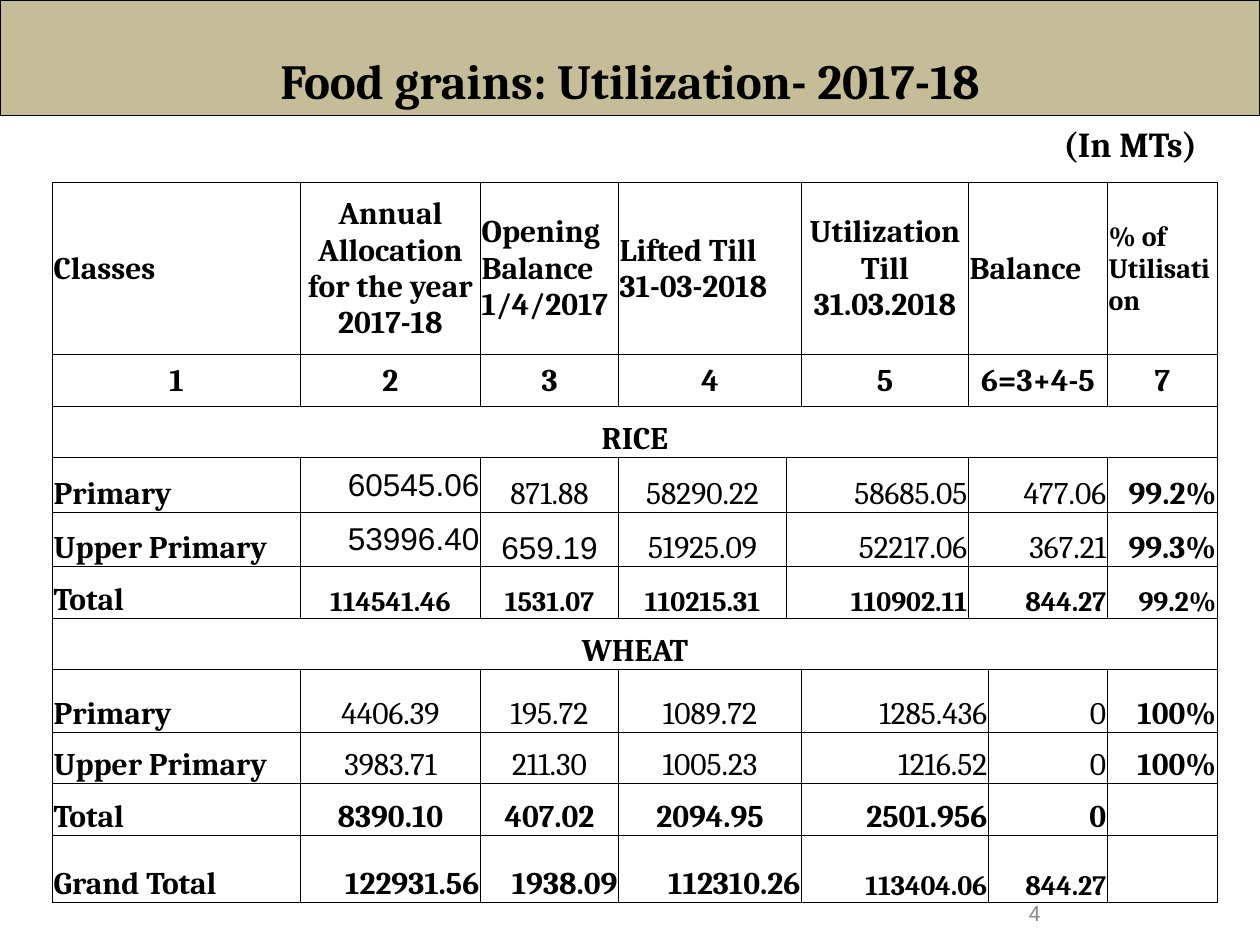
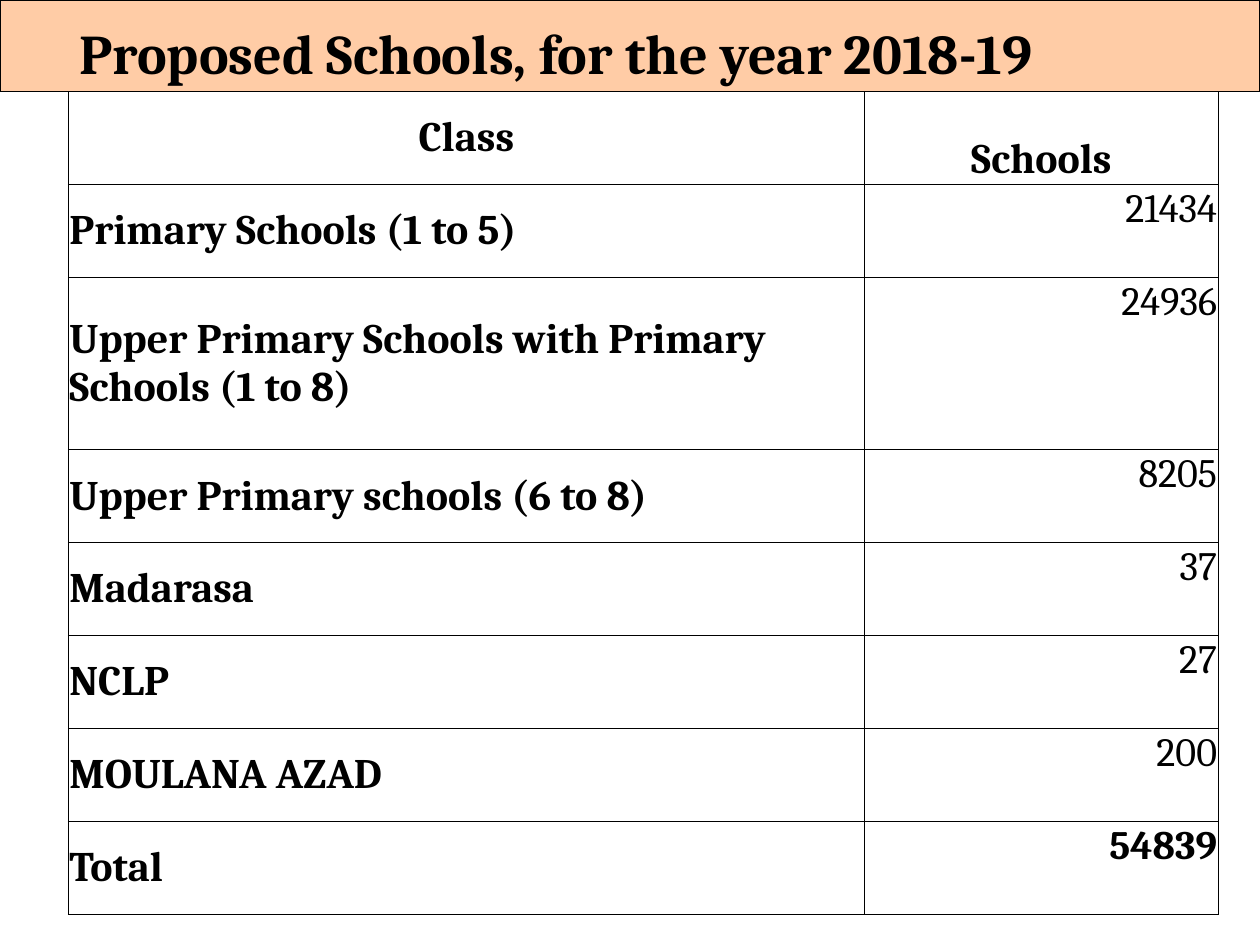
from lxml import etree
from pptx import Presentation
from pptx.dml.color import RGBColor
from pptx.enum import text as t
from pptx.oxml.ns import qn
from pptx.util import Pt

BLACK, WHITE, GREY = "000000", "FFFFFF", "8C8C8C"
LEFT, CENTER, RIGHT = t.PP_ALIGN.LEFT, t.PP_ALIGN.CENTER, t.PP_ALIGN.RIGHT
TOP, MIDDLE, BOTTOM = t.MSO_ANCHOR.TOP, t.MSO_ANCHOR.MIDDLE, t.MSO_ANCHOR.BOTTOM
BOX_MARGINS = (7.2, 3.6, 7.2, 3.6)


def rgb(value):
    return RGBColor.from_string(value)


def put(box, words, align, anchor, margins, color=BLACK, size=18, **font):
    """Write and format the text of a table cell or a text frame."""
    box.vertical_anchor = anchor
    for side, gap in zip(("left", "top", "right", "bottom"), margins):
        setattr(box, f"margin_{side}", Pt(gap))
    box.text = words
    p = getattr(box, "text_frame", box).paragraphs[0]
    p.alignment = align
    style = {"name": "Cambria", "bold": True, "size": Pt(size), **font}
    for r in p.runs:
        for key, value in style.items():
            setattr(r.font, key, value)
        r.font.color.rgb = rgb(color)


prs = Presentation()
prs.slide_width, prs.slide_height = Pt(720), Pt(540)

# Title bands
titles = [
    ("Food grains: Utilization- 2017-18", "C4BD97", 66, 28, CENTER, BOX_MARGINS),
    ("Proposed Schools, for the year 2018-19", "FFCCA6", 52.5, 32, LEFT,
     (45.4, 3.6, 39.6, 3.6)),
]
for words, fill, height, size, align, margins in titles:
    s = prs.slides.add_slide(prs.slide_layouts[5])
    sp = s.shapes.title
    sp.left, sp.top, sp.width, sp.height = 0, 0, Pt(720), Pt(height)
    sp.fill.solid()
    sp.fill.fore_color.rgb = rgb(fill)
    sp.line.color.rgb = rgb(BLACK)
    sp.line.width = Pt(0.75)
    tf = sp.text_frame
    tf.auto_size, tf.word_wrap = t.MSO_AUTO_SIZE.NONE, True
    put(tf, words, align, BOTTOM, margins, size=size)
grain_slide, school_slide = prs.slides

# Unit note and page number
notes = [
    ("(In MTs)", (599.8, 66.2, 92.2, 31.7), False, {"size": 20}),
    ("4", (516.2, 504, 149.8, 36), True,
     {"size": 12, "name": "Roboto", "bold": False, "color": GREY}),
]
for words, place, wrap, font in notes:
    tf = grain_slide.shapes.add_textbox(*map(Pt, place)).text_frame
    tf.word_wrap = wrap
    put(tf, words, CENTER, MIDDLE, BOX_MARGINS, **font)

# Grain rows: kind, height, texts
grain_rows = [
    ("head", 98.4, ["Classes", "Annual Allocation for the year\v2017-18",
                    "Opening Balance 1/4/2017", "Lifted Till\v31-03-2018",
                    "Utilization Till\v31.03.2018", "Balance", "% of Utilisation"]),
    ("head", 29.5, ["1", "2", "3", "4", "5", "6=3+4-5", "7"]),
    ("band", 29.3, ["RICE"]),
    ("rice", 31.4, ["Primary", "60545.06", "871.88", "58290.22", "58685.05",
                    "477.06", "99.2%"]),
    ("rice", 30.9, ["Upper Primary", "53996.40", "659.19", "51925.09", "52217.06",
                    "367.21", "99.3%"]),
    ("rice", 29.6, ["Total", "114541.46", "1531.07", "110215.31", "110902.11",
                    "844.27", "99.2%"]),
    ("band", 29.3, ["WHEAT"]),
    ("wheat", 36, ["Primary", "4406.39", "195.72", "1089.72", "1285.436", "0", "100%"]),
    ("wheat", 29.3, ["Upper Primary", "3983.71", "211.30", "1005.23", "1216.52",
                     "0", "100%"]),
    ("wheat", 29.5, ["Total", "8390.10", "407.02", "2094.95", "2501.956", "0", ""]),
    ("wheat", 38.5, ["Grand Total", "122931.56", "1938.09", "112310.26", "113404.06",
                     "844.27", ""]),
]
# First grid column of each cell, by row kind
starts = {
    "head": [0, 1, 2, 3, 5, 6, 8],
    "band": [0],
    "rice": [0, 1, 2, 3, 4, 6, 8],
    "wheat": [0, 1, 2, 3, 5, 7, 8],
}
grain_widths = [141.7, 102.9, 78.9, 96, 8.6, 95.4, 11.4, 68, 62.9]
small = {(0, 6), (10, 4), (10, 5)} | {(5, c) for c in range(1, 7)}
arial = {(3, 1), (4, 1), (4, 2)}

# Both tables
school_rows = [
    ("Class", "Schools"),
    ("Primary Schools (1 to 5)", "21434"),
    ("Upper Primary Schools with Primary Schools (1 to 8)", "24936"),
    ("Upper Primary schools (6 to 8)", "8205"),
    ("Madarasa", "37"),
    ("NCLP", "27"),
    ("MOULANA AZAD", "200"),
    ("Total", "54839"),
]
school_heights = [98.4 if r == 2 else 53.1 for r in range(len(school_rows))]
tables = []
for s, left, top, widths, heights in [
    (grain_slide, 30, 104.2, grain_widths, [row[1] for row in grain_rows]),
    (school_slide, 39, 52.5, [455, 202.2], school_heights),
]:
    tbl = s.shapes.add_table(len(heights), len(widths), Pt(left), Pt(top),
                             Pt(sum(widths)), Pt(sum(heights))).table
    tbl.first_row = tbl.horz_banding = False
    for column, width in zip(tbl.columns, widths):
        column.width = Pt(width)
    for row, height in zip(tbl.rows, heights):
        row.height = Pt(height)
    tables.append(tbl)
grains, schools = tables

# Cell borders and fills
for tbl in tables:
    for cell in tbl.iter_cells():
        tcPr = cell._tc.get_or_add_tcPr()
        for edge in ("a:lnL", "a:lnR", "a:lnT", "a:lnB"):
            ln = etree.SubElement(tcPr, qn(edge), w=str(Pt(0.5)))
            fill = etree.SubElement(ln, qn("a:solidFill"))
            etree.SubElement(fill, qn("a:srgbClr"), val=BLACK)
        if tbl is grains:
            cell.fill.background()
        else:
            cell.fill.solid()
            cell.fill.fore_color.rgb = rgb(WHITE)

# Grain texts
for r, (kind, height, texts) in enumerate(grain_rows):
    ends = starts[kind][1:] + [len(grain_widths)]
    for c, (words, start, end) in enumerate(zip(texts, starts[kind], ends)):
        cell = grains.cell(r, start)
        if end - start > 1:
            cell.merge(grains.cell(r, end - 1))
        if kind == "band" or r == 1:
            align = CENTER
        elif r == 0:
            align = CENTER if c in (1, 4) else LEFT
        elif c == 0:
            align = LEFT
        else:
            align = RIGHT if c > 3 or r == 10 or (r, c) in {(3, 1), (4, 1)} else CENTER
        middle = kind == "head" or (r, c) in {(3, 1), (4, 1)}
        plain = r in (3, 4, 7, 8) and 0 < c < 6
        put(cell, words, align, MIDDLE if middle else BOTTOM, (0.7, 0.7, 0.7, 0),
            size=16 if (r, c) in small else 18, bold=not plain,
            name="Arial" if (r, c) in arial else "Cambria")

# School texts
for r, (label, count) in enumerate(school_rows):
    head = r == 0
    margins = (0.7,) * 4
    put(schools.cell(r, 0), label, CENTER if head else LEFT, MIDDLE, margins, size=24)
    put(schools.cell(r, 1), count, CENTER if head else RIGHT, BOTTOM if head else TOP,
        margins, size=24 if head else 23, bold=head or label == "Total")

prs.save("out.pptx")
